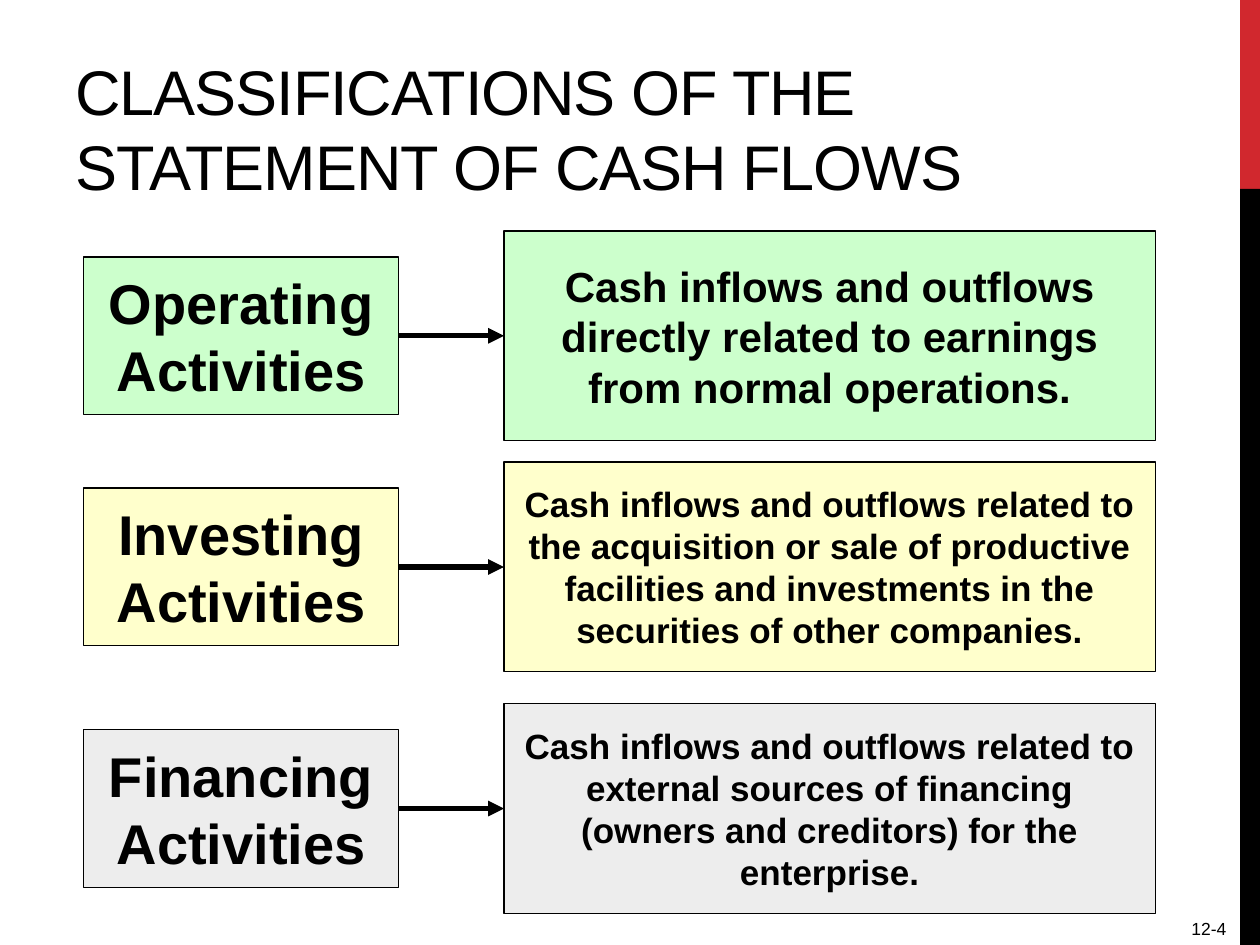
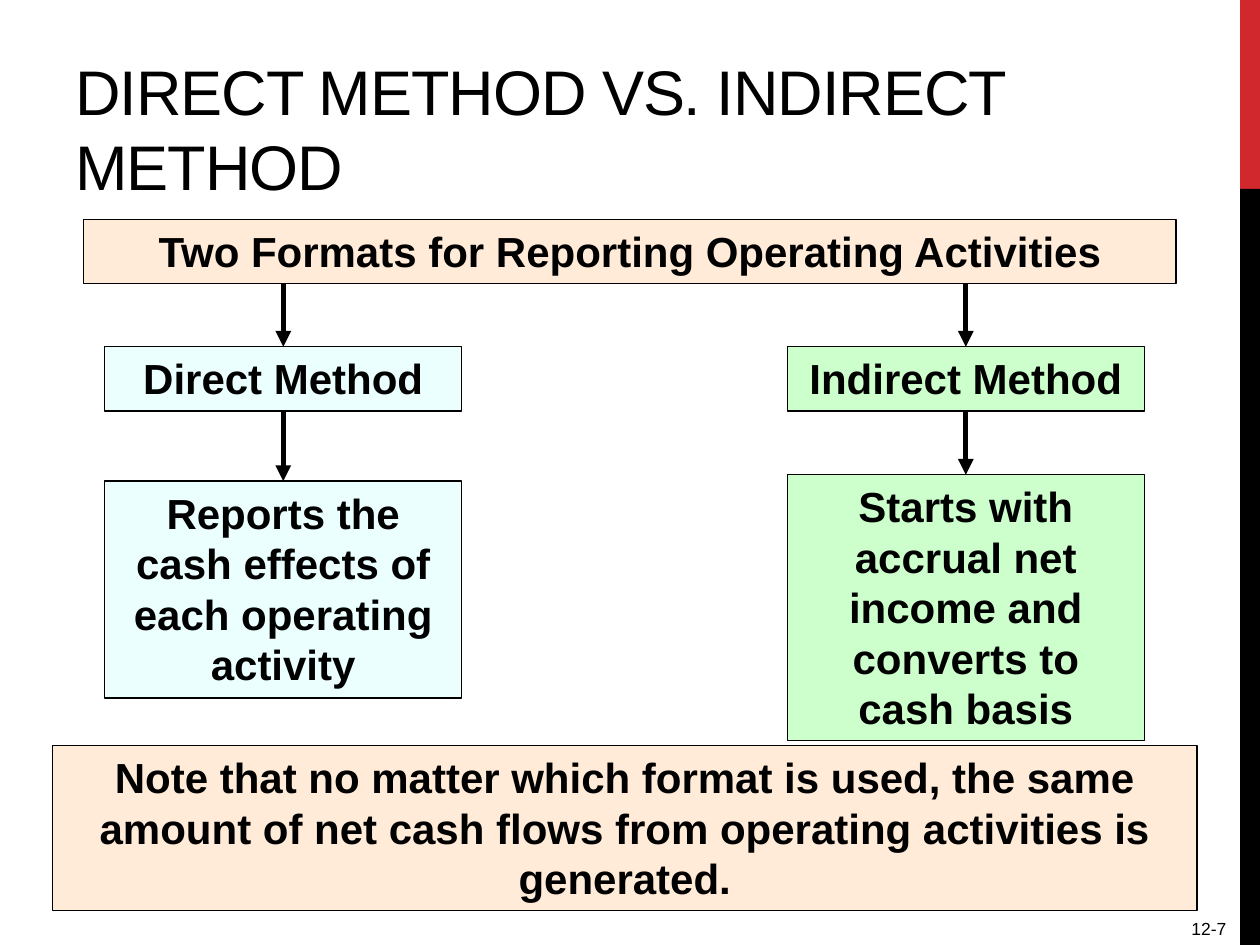
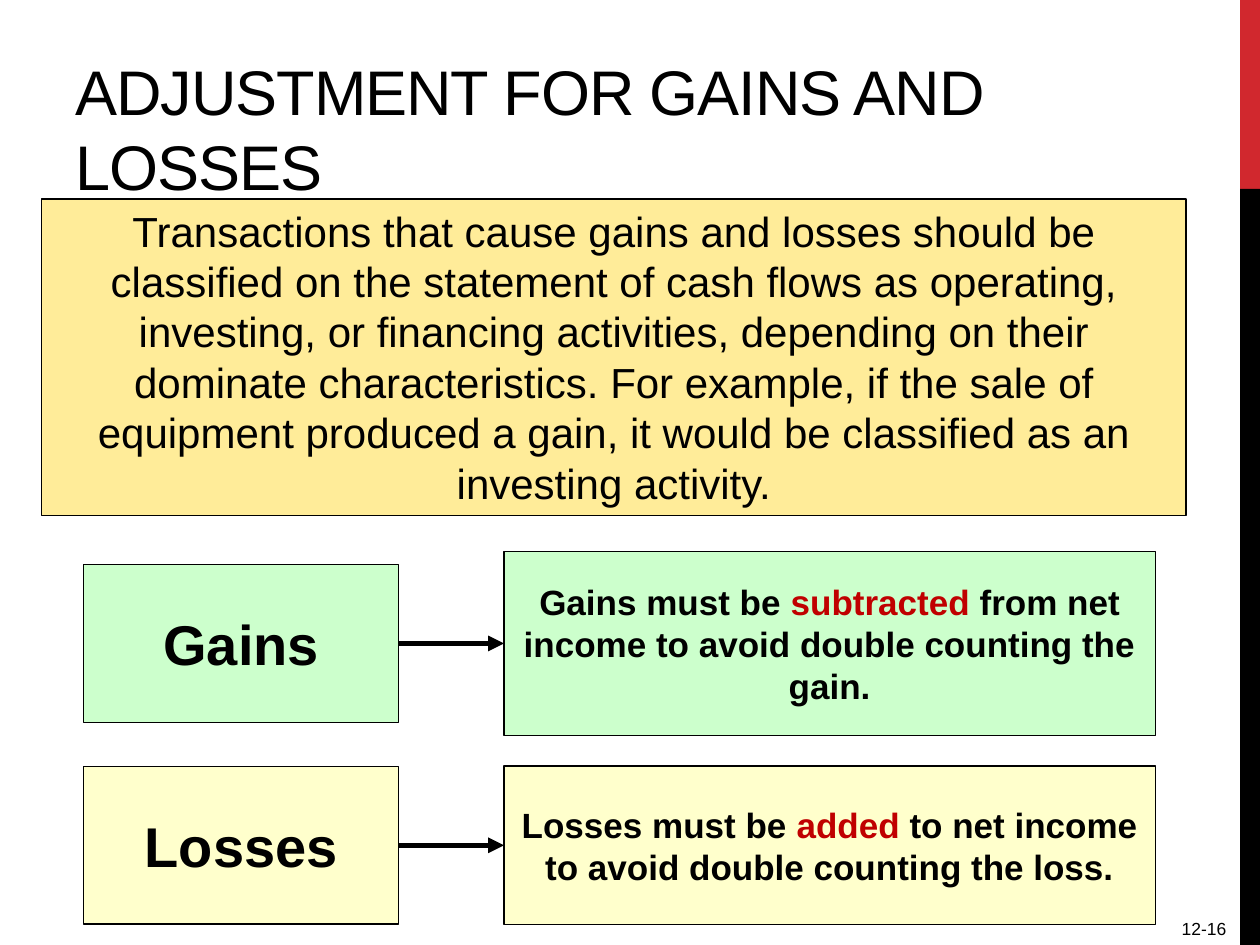
"""Build three slides on the statement of cash flows."""
from lxml import etree
from pptx import Presentation
from pptx import util as u
from pptx.dml.color import RGBColor
from pptx.enum import shapes, text
from pptx.oxml import ns

FONT, BLACK, RED, ACCENT = "Arial", "000000", "D1282E", "C00000"
GREEN, YELLOW, GREY = "CCFFCC", "FFFFCC", "EDEDED"
PEACH, BLUE, GOLD = "FFEBD7", "EBFFFF", "FFEC99"
WIDTH, HEIGHT = 25.4, 19.05
BAND_WIDTH, BAND_SPLIT = 0.4, 3.81
LABEL_LEFT, LABEL_WIDTH, LABEL_HEIGHT = 1.69, 6.35, 3.18
DETAIL_LEFT, DETAIL_WIDTH = 10.16, 13.13
METHOD_TOP, METHOD_WIDTH, METHOD_HEIGHT = 6.99, 7.2, 1.3
HEADER = (1.69, 4.42, 22.02, 1.3)
NOTE = (1.06, 15.03, 23.07, 3.33)
INTRO = (0.84, 4.01, 23.07, 6.38)

CLASSES = [
    ("Operating Activities", "Cash inflows and outflows directly related to earnings "
     "from normal operations.", GREEN, 6.77, 4.23, 24),
    ("Investing Activities", "Cash inflows and outflows related to the acquisition or sale "
     "of productive facilities and investments in the securities of other companies.",
     YELLOW, 11.43, 4.23, 20),
    ("Financing Activities", "Cash inflows and outflows related to external sources of "
     "financing (owners and creditors) for the enterprise.", GREY, 16.3, 4.23, 20),
]
METHODS = [
    ("Direct Method", "Reports the cash effects of each operating activity",
     BLUE, 5.71, 9.7, 4.37),
    ("Indirect Method", "Starts with accrual net income and converts to cash basis",
     GREEN, 19.47, 9.57, 5.36),
]
ADJUSTMENTS = [
    ("Gains", "Gains must be *subtracted* from net income to avoid double counting the gain.",
     GREEN, 12.97, 3.71, 20),
    ("Losses", "Losses must be *added* to net income to avoid double counting the loss.",
     YELLOW, 17.04, 3.2, 20),
]
FORMATS_TEXT = "Two Formats for Reporting Operating Activities"
NOTE_TEXT = ("Note that no matter which format is used, the same amount of net cash flows "
             "from operating activities is generated.")
INTRO_TEXT = ("Transactions that cause gains and losses should be classified on the statement "
              "of cash flows as operating, investing, or financing activities, depending on "
              "their dominate characteristics. For example, if the sale of equipment produced "
              "a gain, it would be classified as an investing activity.")


def color(value):
    return RGBColor.from_string(value)


def lengths(*values):
    return [u.Cm(value) for value in values]


def write(shape, wording, size, bold=False, align="CENTER", anchor="MIDDLE", spacing=0):
    frame = shape.text_frame
    frame.word_wrap = True
    frame.vertical_anchor = text.MSO_ANCHOR[anchor]
    para = frame.paragraphs[0]
    para.alignment = text.PP_ALIGN[align]
    for index, part in enumerate(wording.split("*")):
        span = para.add_run()
        span.text = part
        for name, value in {"name": FONT, "size": u.Pt(size), "bold": bold}.items():
            setattr(span.font, name, value)
        span.font.color.rgb = color(ACCENT if index % 2 else BLACK)
        if spacing:
            span.font._element.set("spc", str(spacing))


def add_rect(page, place, fill, outlined=True):
    box = page.shapes.add_shape(shapes.MSO_SHAPE.RECTANGLE, *lengths(*place))
    box.shadow.inherit = False
    box.fill.solid()
    box.fill.fore_color.rgb = color(fill)
    if outlined:
        box.line.color.rgb = color(BLACK)
        box.line.width = u.Pt(0.75)
    else:
        box.line.fill.background()
    return box


def add_box(page, place, fill, wording, size, bold=True, grow=False):
    box = add_rect(page, place, fill)
    write(box, wording, size, bold, anchor="TOP" if grow else "MIDDLE")
    if grow:
        box.text_frame.auto_size = text.MSO_AUTO_SIZE.SHAPE_TO_FIT_TEXT


def add_arrow(page, *ends):
    arrow = page.shapes.add_connector(shapes.MSO_CONNECTOR.STRAIGHT, *lengths(*ends))
    arrow.line.color.rgb = color(BLACK)
    arrow.line.width = u.Pt(3)
    etree.SubElement(arrow.line._get_or_add_ln(), ns.qn("a:tailEnd"), type="triangle")
    etree.SubElement(arrow._element.spPr, ns.qn("a:effectLst"))


def add_page(deck, title, number):
    page = deck.slides.add_slide(deck.slide_layouts[6])
    left = WIDTH - BAND_WIDTH
    add_rect(page, (left, 0, BAND_WIDTH, BAND_SPLIT), RED, False)
    add_rect(page, (left, BAND_SPLIT, BAND_WIDTH, HEIGHT - BAND_SPLIT), BLACK, False)
    heading = page.shapes.add_textbox(*lengths(1.27, 0.42, 23.28, 3.81))
    write(heading, title, 36, align="LEFT", anchor="BOTTOM", spacing=-60)
    footer = page.shapes.add_textbox(*lengths(20.32, 18.26, 4.65, 0.79))
    write(footer, number, 10, align="RIGHT", anchor="BOTTOM")
    return page


def add_pairs(page, pairs):
    for label, detail, fill, middle, height, size in pairs:
        add_box(page, (LABEL_LEFT, middle - LABEL_HEIGHT / 2, LABEL_WIDTH, LABEL_HEIGHT),
                fill, label, 32)
        add_box(page, (DETAIL_LEFT, middle - height / 2, DETAIL_WIDTH, height),
                fill, detail, size)
        add_arrow(page, LABEL_LEFT + LABEL_WIDTH, middle, DETAIL_LEFT, middle)


def add_methods(page):
    add_box(page, HEADER, PEACH, FORMATS_TEXT, 24, grow=True)
    for label, detail, fill, center, top, height in METHODS:
        left = center - METHOD_WIDTH / 2
        add_box(page, (left, METHOD_TOP, METHOD_WIDTH, METHOD_HEIGHT), fill, label, 24, grow=True)
        add_box(page, (left, top, METHOD_WIDTH, height), fill, detail, 24, grow=True)
        add_arrow(page, center, HEADER[1] + HEADER[3], center, METHOD_TOP)
        add_arrow(page, center, METHOD_TOP + METHOD_HEIGHT, center, top)
    add_box(page, NOTE, PEACH, NOTE_TEXT, 24, grow=True)


def main():
    deck = Presentation()
    deck.slide_width, deck.slide_height = lengths(WIDTH, HEIGHT)
    add_pairs(add_page(deck, "CLASSIFICATIONS OF THE STATEMENT OF CASH FLOWS", "12-4"), CLASSES)
    add_methods(add_page(deck, "DIRECT METHOD VS. INDIRECT METHOD", "12-7"))
    page = add_page(deck, "ADJUSTMENT FOR GAINS AND LOSSES", "12-16")
    add_box(page, INTRO, GOLD, INTRO_TEXT, 24, bold=False, grow=True)
    add_pairs(page, ADJUSTMENTS)
    deck.save("out.pptx")


if __name__ == "__main__":
    main()
